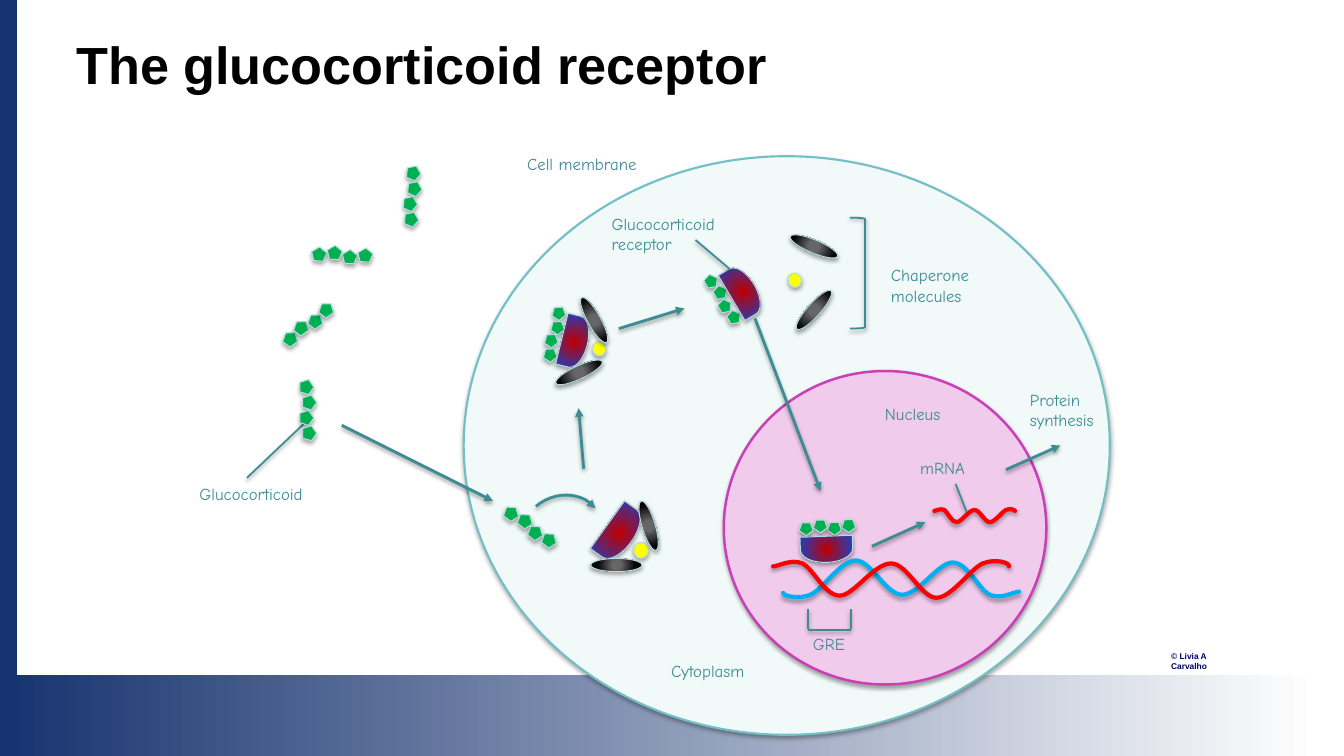
import math

import pptx
import pptx.dml.color
import pptx.enum.shapes
import pptx.enum.text
import pptx.oxml
import pptx.oxml.ns
import pptx.util

Pt = pptx.util.Pt
qn = pptx.oxml.ns.qn
SHAPE = pptx.enum.shapes.MSO_SHAPE
ALIGN = pptx.enum.text.PP_ALIGN
ANCHOR = pptx.enum.text.MSO_ANCHOR
NS = pptx.oxml.ns.nsdecls("a")

COLORS = {
    "navy": "16346F", "bar": "17336F", "white": "FFFFFF", "black": "000000",
    "credit": "000066", "teal": "3C8C93", "edge": "B6DCDF", "green": "00B050",
    "cell": "F1F9F9", "cell_edge": "72BFC5", "nucleus": "F1CBEC",
    "nucleus_edge": "CA3EB6", "yellow": "FFFF00", "red": "FF0000",
    "blue": "00B0F0", "core": "C00000", "indigo": "3737A4", "grey": "666666",
}
LINEAR = '<a:lin ang="0" scaled="0"/>'
RADIAL = ('<a:path path="circle"><a:fillToRect l="50000" t="50000" '
          'r="50000" b="50000"/></a:path>')
RECEPTOR_FILL = [(0, "core"), (77, "indigo")]
CHAPERONE_FILL = [(17, "grey"), (73, "black")]

# x, y, angle, scale
CHAINS_OUTSIDE = [
    (227.9, 181.4, 4.7, 1), (207, 241.9, 324.5, 1),
    (295.6, 123.8, 96.1, 1), (219.2, 276.5, 90, 1),
]
CHAINS_INSIDE = [
    (508.3, 200.9, 60.9, 0.92), (399.6, 223.9, 105.3, 0.92),
    (365.4, 366.5, 38.6, 1), (606.2, 375.8, 179.3, 0.92),
]
RECEPTORS = [
    (530.6, 208.1, 329.3, 1), (410.4, 244.1, 13.8, 1),
    (442.4, 380.9, 35.7, 1.12), (590.4, 392.4, 87.8, 1),
]
SMALL_CHAPERONES = [(567.7, 200.2, 338.1, 1), (428, 249.1, 338.1, 1),
                    (457.9, 393.1, 0, 1.12)]
# x, y, angle
LONG_CHAPERONES = [
    (581.4, 221.4, 131.6), (581.4, 176, 202.7), (413.6, 266, 154.9),
    (424.4, 228.6, 61.1), (440.3, 403.6, 180), (463.3, 375.5, 73.4),
]
ARROWS = [
    (442.1, 234.7, 488.9, 220.3), (539.3, 227.5, 586.1, 350.6),
    (718.6, 335.5, 757.4, 318.2), (622.8, 390.2, 661, 373),
    (416.9, 334.8, 413.3, 291.6), (244.1, 303.8, 352.1, 357.8),
]
POINTERS = [
    (682.6, 345.6, 690.5, 365.8), (521.3, 192.2, 496.8, 171.4),
    (577.4, 449.3, 577.4, 434.9), (607.7, 449.3, 607.7, 434.9),
    (607.7, 450, 577.4, 450),
]
LABELS = [
    ("Glucocorticoid", 135.4, 342, 117.4, 21.6),
    ("Cell membrane", 369.4, 106.6, 144.7, 21.6),
    ("Cytoplasm", 472.3, 468.7, 144.7, 21.6),
    ("Nucleus", 625, 285.1, 144.7, 21.6),
    ("Chaperone\nmolecules", 629.3, 185.8, 87.1, 51.1),
    ("mRNA", 650.2, 323.3, 63.4, 21.6),
    ("Protein synthesis", 728.6, 275, 66.2, 51.1),
    ("Glucocorticoid receptor", 429.8, 149, 117.4, 36),
]
# start point, then control, control, end for every bend
STRANDS = [
    ("blue", [
        (559.4, 423.4), (558.7, 425.5), (570.2, 428.4), (578.9, 424.8),
        (587.5, 421.2), (600.5, 400.3), (611.3, 400.3),
        (622.1, 400.3), (632.9, 424.8), (644.4, 424.8),
        (655.9, 424.8), (670.3, 401.8), (680.4, 401.8),
        (691.2, 401.8), (699.1, 421.2), (707, 424.8),
        (715, 428.4), (724.3, 422.6), (727.9, 422.6)]),
    ("red", [
        (720.7, 404.6), (721.4, 401.8), (710.6, 398.9), (702, 402.5),
        (693.4, 406.1), (679.7, 427), (668.9, 427),
        (658.1, 427), (648, 402.5), (636.5, 402.5),
        (624.2, 402.5), (609.8, 425.5), (599.8, 425.5),
        (589, 425.5), (581, 406.1), (573.1, 402.5),
        (565.2, 398.9), (555.8, 404.6), (552.2, 404.6)]),
    ("red", [
        (725, 365), (725, 364.3), (721.4, 362.9), (718.6, 364.3),
        (715.7, 365.8), (710.6, 373), (707, 373),
        (703.4, 373), (699.8, 364.3), (696.2, 364.3),
        (691.9, 364.3), (686.9, 373), (683.3, 373),
        (679.7, 373), (676.8, 365.8), (674.6, 364.3),
        (671.8, 362.9), (668.2, 365), (667.4, 365)]),
]


def rgb(name):
    return pptx.dml.color.RGBColor.from_string(COLORS[name])


def set_line(sp, color, width, arrow=False):
    sp.line.color.rgb = rgb(color)
    sp.line.width = Pt(width)
    if arrow:
        ln = sp._element.spPr.find(qn("a:ln"))
        ln.append(pptx.oxml.parse_xml(f'<a:tailEnd {NS} type="triangle"/>'))


def add_shadow(sp, alpha=35):
    """Give a soft shadow below; call it once the line is set."""
    spPr = sp._element.spPr
    for old in spPr.findall(qn("a:effectLst")):
        spPr.remove(old)
    spPr.append(pptx.oxml.parse_xml(
        f'<a:effectLst {NS}><a:outerShdw blurRad="{Pt(3.1)}" dist="{Pt(1.8)}" '
        f'dir="5400000" rotWithShape="0"><a:srgbClr val="{COLORS["black"]}">'
        f'<a:alpha val="{alpha * 1000}"/></a:srgbClr></a:outerShdw></a:effectLst>'))


def set_gradient(sp, stops, shade):
    sp.fill.gradient()
    grad = sp._element.spPr.find(qn("a:gradFill"))
    for child in list(grad):
        grad.remove(child)
    marks = "".join(f'<a:gs pos="{pos * 1000}"><a:srgbClr val="{COLORS[c]}"/></a:gs>'
                    for pos, c in stops)
    new = pptx.oxml.parse_xml(
        f'<a:gradFill {NS}><a:gsLst>{marks}</a:gsLst>{shade}</a:gradFill>')
    for child in list(new):
        grad.append(child)


def add_shape(s, kind, x, y, w, h, fill=None, line=None, angle=0, arrow=False):
    """Fill is a colour name or a list of radial stops; line is (colour, width)."""
    sp = s.shapes.add_shape(kind, Pt(x), Pt(y), Pt(w), Pt(h))
    sp.rotation = angle
    sp.shadow.inherit = False
    if fill is None:
        sp.fill.background()
    elif isinstance(fill, str):
        sp.fill.solid()
        sp.fill.fore_color.rgb = rgb(fill)
    else:
        set_gradient(sp, fill, RADIAL)
    if line:
        set_line(sp, *line, arrow)
        add_shadow(sp)
    else:
        sp.line.fill.background()
    return sp


def add_molecule(s, kind, cx, cy, w, h, fill, angle):
    add_shape(s, kind, cx - w / 2, cy - h / 2, w, h, fill, ("edge", 0.75), angle)


def add_chain(s, cx, cy, angle, scale):
    """Draw four pentagons in a zigzag along the angle, from the first centre."""
    cos, sin = math.cos(math.radians(angle)), math.sin(math.radians(angle))
    for i in range(4):
        along, across = 11 * i * scale, -2 * (i % 2) * scale
        add_molecule(s, SHAPE.REGULAR_PENTAGON, cx + along * cos - across * sin,
                     cy + along * sin + across * cos,
                     10.8 * scale, 10 * scale, "green", angle)


def add_line(s, x1, y1, x2, y2, width, arrow=False):
    c = s.shapes.add_connector(pptx.enum.shapes.MSO_CONNECTOR.STRAIGHT,
                               Pt(x1), Pt(y1), Pt(x2), Pt(y2))
    set_line(c, "teal", width, arrow)
    add_shadow(c, 38)


def add_strand(s, color, points):
    """Draw an open curve whose points come in threes after the first."""
    points = [(Pt(x), Pt(y)) for x, y in points]
    builder = s.shapes.build_freeform(*points[0], scale=1.0)
    builder.add_line_segments(points[1:], close=False)
    sp = builder.convert_to_shape()
    outline = sp._element.xpath(".//a:path")[0]
    steps = outline.findall(qn("a:lnTo"))
    for i in range(0, len(steps), 3):
        bend = pptx.oxml.parse_xml(f"<a:cubicBezTo {NS}/>")
        for step in steps[i:i + 3]:
            bend.append(step[0])
            outline.remove(step)
        outline.append(bend)
    sp.fill.background()
    set_line(sp, color, 3)
    sp._element.spPr.find(qn("a:ln")).set("cap", "rnd")
    add_shadow(sp)


def add_text(s, text, x, y, w, h, color="teal", align=ALIGN.LEFT,
             anchor=ANCHOR.TOP, name="Comic Neue", size=12, bold=False):
    tf = s.shapes.add_textbox(Pt(x), Pt(y), Pt(w), Pt(h)).text_frame
    tf.word_wrap = True
    tf.vertical_anchor = anchor
    tf.text = text
    for p in tf.paragraphs:
        p.alignment = align
        for r in p.runs:
            for key, value in {"name": name, "size": Pt(size), "bold": bold}.items():
                setattr(r.font, key, value)
            r.font.color.rgb = rgb(color)


def main():
    prs = pptx.Presentation()
    prs.slide_width, prs.slide_height = Pt(960), Pt(540)
    s = prs.slides.add_slide(prs.slide_layouts[6])

    add_text(s, "© Livia A Carvalho", 829.4, 461.5, 61.2, 14.4, "credit",
             name="Arial", size=6, bold=True)
    bar = add_shape(s, SHAPE.RECTANGLE, 0, 482.4, 960, 57.6, "bar")
    set_gradient(bar, [(0, "bar"), (98, "white"), (100, "white")], LINEAR)
    add_shape(s, SHAPE.RECTANGLE, 0, 0, 12.2, 540, "navy")
    add_text(s, "The glucocorticoid receptor", 47.5, 25.9, 601.9, 38.9, "black",
             anchor=ANCHOR.MIDDLE, name="Arial", size=37.3, bold=True)

    add_line(s, 176.4, 341.3, 217.4, 302.4, 1.25)
    for chain in CHAINS_OUTSIDE:
        add_chain(s, *chain)
    add_shape(s, SHAPE.OVAL, 331.2, 111.6, 461.5, 413.3, "cell", ("cell_edge", 1.5))
    add_shape(s, SHAPE.OVAL, 517, 265, 230.4, 223.9, "nucleus", ("nucleus_edge", 1.75))

    for chain in CHAINS_INSIDE:
        add_chain(s, *chain)
    for x, y, angle, scale in RECEPTORS:
        add_molecule(s, SHAPE.FLOWCHART_DELAY, x, y, 18.7 * scale, 37.4 * scale,
                     RECEPTOR_FILL, angle)
    for x, y, angle, scale in SMALL_CHAPERONES:
        add_molecule(s, SHAPE.OVAL, x, y, 9.4 * scale, 10.2 * scale, "yellow", angle)
    for x, y, angle in LONG_CHAPERONES:
        add_molecule(s, SHAPE.OVAL, x, y, 36.7, 9.4, CHAPERONE_FILL, angle)

    add_shape(s, SHAPE.ARC, 369.4, 355, 63.4, 56.9, None, ("teal", 2), 320, arrow=True)
    add_shape(s, SHAPE.RIGHT_BRACKET, 607, 155.5, 10.8, 79.2, None, ("teal", 1.25))
    for strand in STRANDS:
        add_strand(s, *strand)
    for arrow in ARROWS:
        add_line(s, *arrow, 2, arrow=True)
    for pointer in POINTERS:
        add_line(s, *pointer, 1.25)
    for label in LABELS:
        add_text(s, *label)
    add_text(s, "GRE", 559.4, 449.3, 65.5, 21.6, align=ALIGN.CENTER)
    prs.save("out.pptx")


if __name__ == "__main__":
    main()
